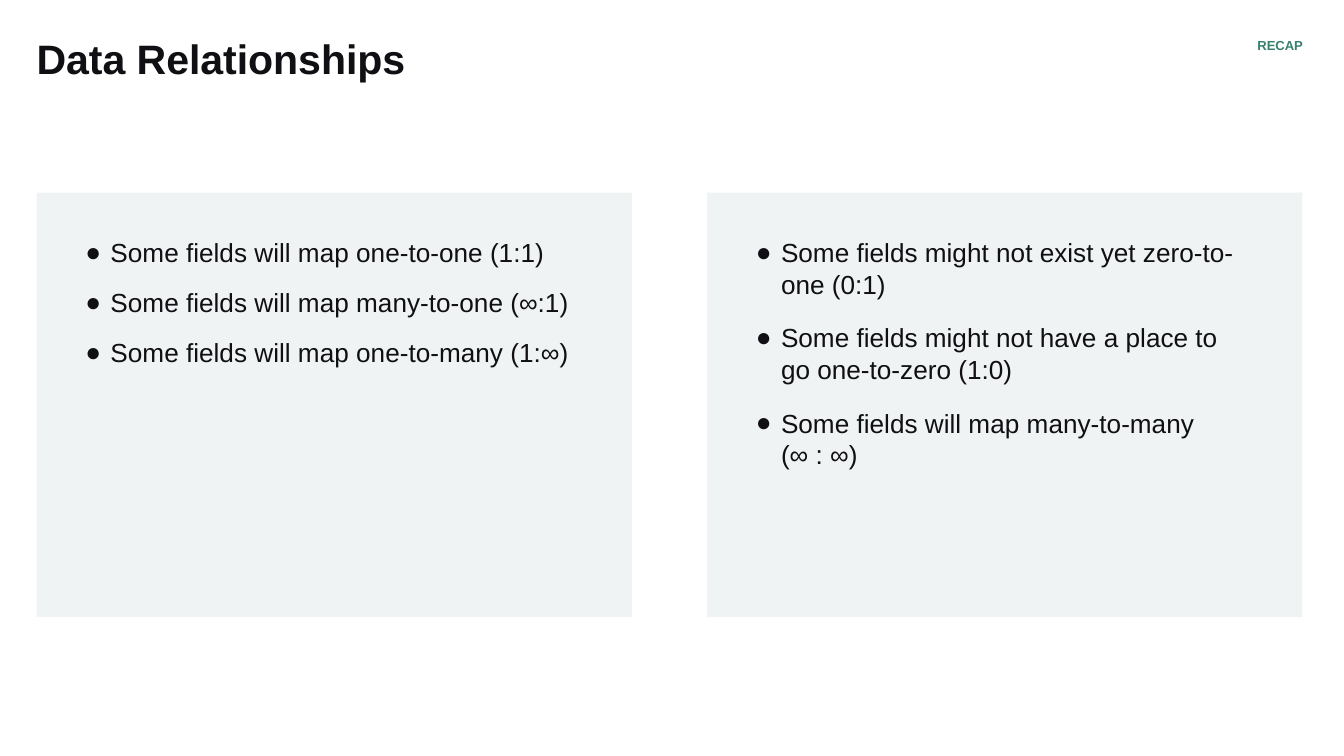
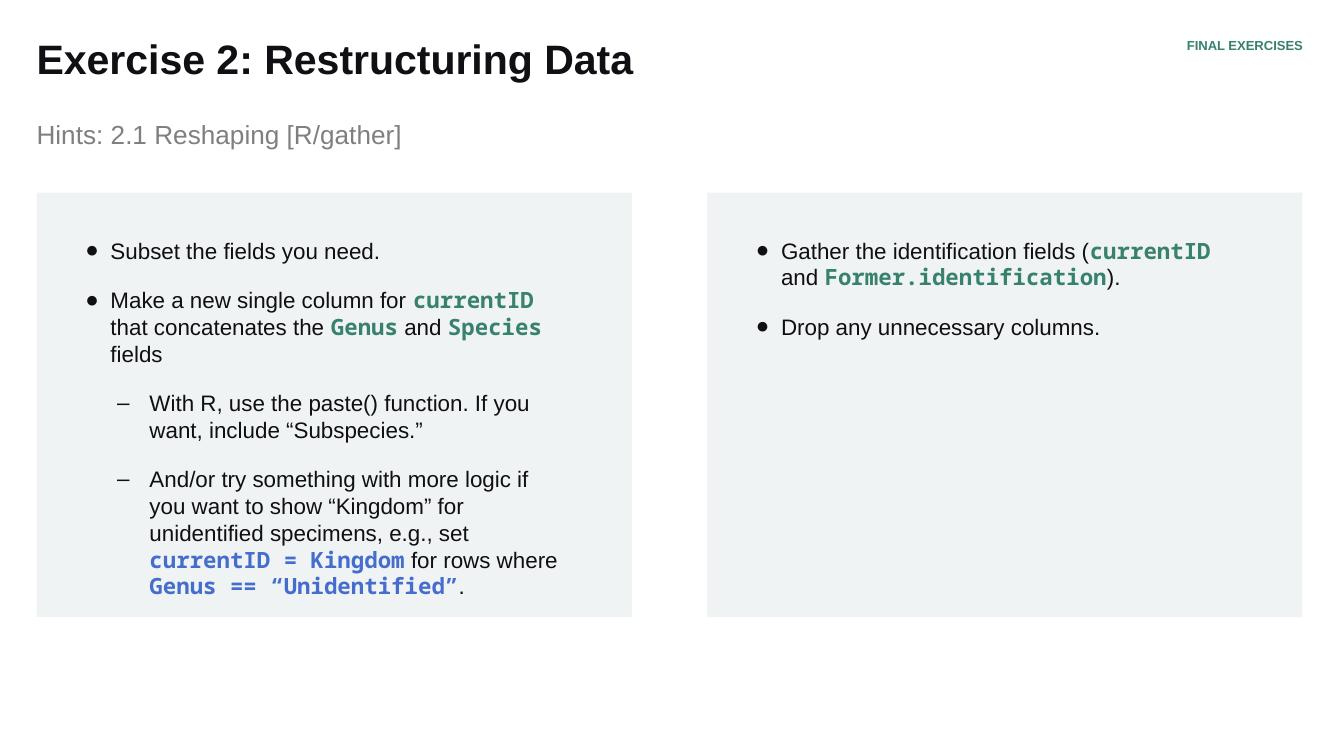
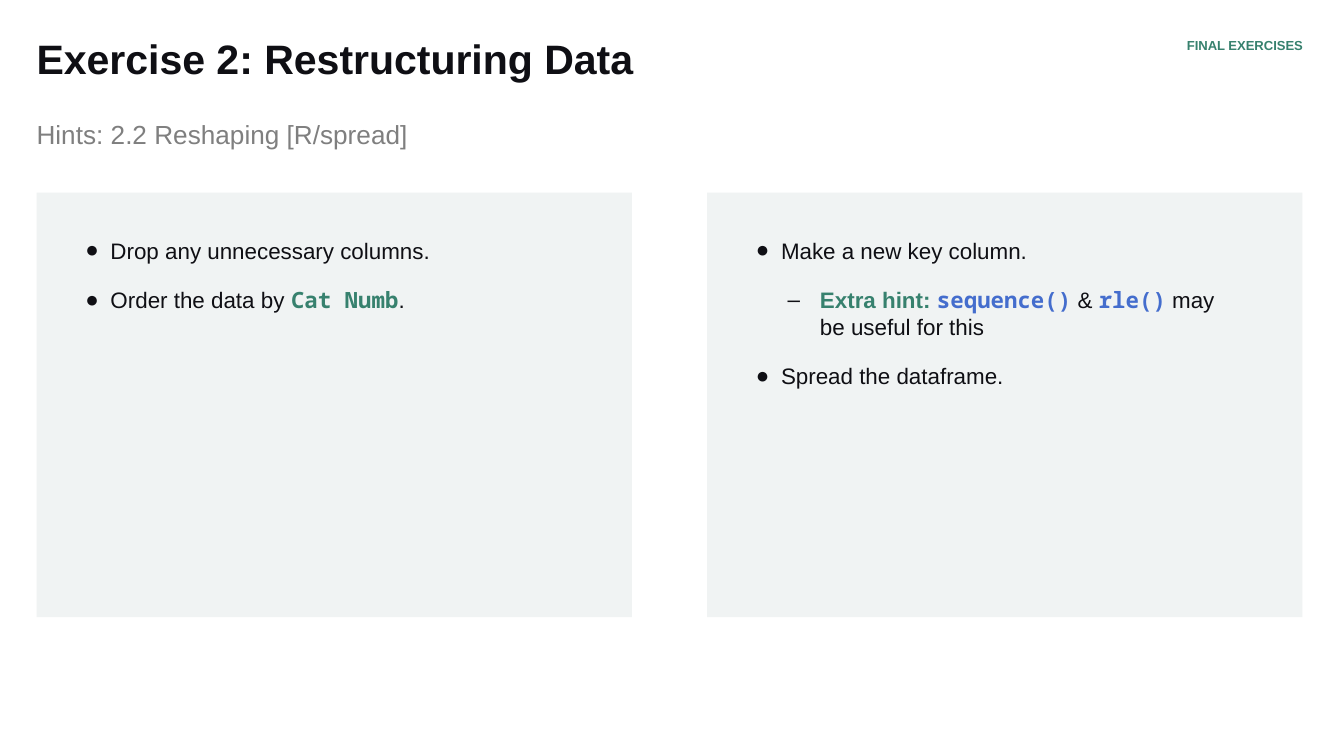
from dataclasses import dataclass

from lxml import etree
from pptx import Presentation
from pptx import util as u
from pptx.dml.color import RGBColor
from pptx.enum import shapes, text
from pptx.oxml import ns


@dataclass(frozen=True)
class Theme:
    """Colours, fonts and type sizes shared by the slides."""
    ink: str = "0F0F14"
    green: str = "37816E"
    blue: str = "446DCD"
    grey: str = "7F7F7F"
    panel: str = "F0F3F3"
    sans: str = "Arial"
    mono: str = "Noto Sans Mono"
    title: int = 22
    lead: int = 14
    body: int = 12
    tag: int = 7


@dataclass(frozen=True)
class Box:
    """A rectangle in points."""
    x: float
    y: float
    w: float
    h: float

    def spot(self):
        """Return the four lengths that place a shape."""
        return [u.Pt(n) for n in (self.x, self.y, self.w, self.h)]

    def sub(self, x, y, w, h):
        """Return a box placed relative to this one."""
        return Box(self.x + x, self.y + y, w, h)


T = Theme()
PAGE = Box(0, 0, 720, 405)
HEAD = PAGE.sub(19.6, 21, 678.4, 77)
PANEL = PAGE.sub(19.6, 103.2, 319, 227.5)
STEP = 359.2
LEVELS = (("●", 14.4, 13.5), ("–", 35.3, 17.3))
STYLES = {
    "field": (T.mono, T.green),
    "code": (T.mono, T.blue),
    "note": (T.sans, T.green),
}


def dress(font, name, color, bold=False, size=None):
    """Set the look of a font."""
    font.name, font.bold = name, bold
    font.color.rgb = RGBColor.from_string(color)
    if size:
        font.size = u.Pt(size)


def frame(shape, left=0, top=0, right=7.2, low=7.2):
    """Prepare a wrapping text frame anchored at the top."""
    area = shape.text_frame
    area.word_wrap = True
    area.auto_size = text.MSO_AUTO_SIZE.NONE
    area.vertical_anchor = text.MSO_ANCHOR.TOP
    area.margin_left, area.margin_top = u.Pt(left), u.Pt(top)
    area.margin_right, area.margin_bottom = u.Pt(right), u.Pt(low)
    return area


def place(shape, box):
    """Move a shape to a box."""
    shape.left, shape.top, shape.width, shape.height = box.spot()


def label(shape, words, size, color, bold=False, right=False, line=None):
    """Write a single line of text in a shape."""
    para = frame(shape, right=0 if right else 7.2).paragraphs[0]
    para.text = words
    para.alignment = text.PP_ALIGN.RIGHT if right else text.PP_ALIGN.LEFT
    if line:
        para.line_spacing = line
    dress(para.font, T.sans, color, bold, size)


def header(slide, box, title, tag, hint):
    """Place the title, the corner tag and the optional hint line."""
    place(slide.shapes.title, box.sub(0, 0, 575.3, 42.5))
    label(slide.shapes.title, title, T.title, T.ink, True, line=0.9)
    corner = slide.shapes.add_textbox(*box.sub(box.w - 153.4, 0, 153.4, 11.5).spot())
    label(corner, tag, T.tag, T.green, True, True, 0.9)
    if hint:
        strip = slide.shapes.add_textbox(*box.sub(0, 42.5, 510.5, 33.8).spot())
        label(strip, hint, T.lead, T.grey)


def bullet(para, level):
    """Give a paragraph the bullet and indent of its level."""
    mark, left, hang = LEVELS[level]
    para.level = level
    props = para._p.get_or_add_pPr()
    props.set("marL", str(u.Pt(left)))
    props.set("indent", str(-u.Pt(hang)))
    tint = etree.SubElement(props, ns.qn("a:buClr"))
    etree.SubElement(tint, ns.qn("a:srgbClr"), val=T.ink)
    etree.SubElement(props, ns.qn("a:buFont"), typeface=T.sans)
    etree.SubElement(props, ns.qn("a:buChar"), char=mark)


def points(area, items, size, gap):
    """Write bulleted items, each a level followed by its parts."""
    for i, (level, *parts) in enumerate(items):
        para = area.add_paragraph() if i else area.paragraphs[0]
        bullet(para, level)
        para.space_before = u.Pt(gap if i else 0)
        dress(para.font, T.sans, T.ink, size=size)
        for part in parts:
            if part == "\n":
                para.add_line_break()
                continue
            words, style = (part, None) if isinstance(part, str) else part
            run = para.add_run()
            run.text = words
            if style:
                dress(run.font, *STYLES[style], bold=True)


def panel(slide, box, items, size, gap):
    """Draw a tinted panel with its list."""
    back = slide.shapes.add_shape(shapes.MSO_SHAPE.RECTANGLE, *box.spot())
    back.shadow.inherit = False
    back.fill.solid()
    back.fill.fore_color.rgb = RGBColor.from_string(T.panel)
    back.line.fill.background()
    inner = slide.shapes.add_textbox(*box.sub(25.2, 16.4, 267.8, 184.3).spot())
    points(frame(inner, top=7.2), items, size, gap)


def page(deck, title, tag, lists, hint=None, size=T.body, gaps=(12, 12)):
    """Add a slide with a header and two panels."""
    slide = deck.slides.add_slide(deck.slide_layouts[5])
    header(slide, HEAD, title, tag, hint)
    for i, (items, gap) in enumerate(zip(lists, gaps)):
        panel(slide, PANEL.sub(i * STEP, 0, PANEL.w, PANEL.h), items, size, gap)


def main():
    """Build and save the deck."""
    deck = Presentation()
    deck.slide_width, deck.slide_height = u.Pt(PAGE.w), u.Pt(PAGE.h)
    page(deck, "Data Relationships", "RECAP", (
        [(0, "Some fields will map one-to-one (1:1)"),
         (0, "Some fields will map many-to-one (∞:1)"),
         (0, "Some fields will map one-to-many (1:∞)")],
        [(0, "Some fields might not exist yet zero-to-one (0:1)"),
         (0, "Some fields might not have a place to go one-to-zero (1:0)"),
         (0, "Some fields will map many-to-many", "\n", "(∞ : ∞)")],
    ), size=T.lead, gaps=(10, 12))

    task = "Exercise 2: Restructuring Data", "FINAL EXERCISES"
    page(deck, *task, (
        [(0, "Subset the fields you need."),
         (0, "Make a new single column for ", ("currentID", "field"),
          " that concatenates the ", ("Genus", "field"), " and ",
          ("Species", "field"), " fields"),
         (1, "With R, use the paste() function. If you want, include “Subspecies.”"),
         (1, "And/or try something with more logic if you want to show “Kingdom” "
             "for unidentified specimens, e.g., set ",
          ("currentID = Kingdom", "code"), " for rows where ",
          ("Genus == “Unidentified”", "code"), ".")],
        [(0, "Gather the identification fields (", ("currentID", "field"),
          " and ", ("Former.identification", "field"), ")."),
         (0, "Drop any unnecessary columns.")],
    ), "Hints: 2.1 Reshaping [R/gather]")
    page(deck, *task, (
        [(0, "Drop any unnecessary columns."),
         (0, "Order the data by ", ("Cat Numb", "field"), ".")],
        [(0, "Make a new key column."),
         (1, ("Extra hint: ", "note"), ("sequence()", "code"), " & ",
          ("rle()", "code"), " may be useful for this"),
         (0, "Spread the dataframe.")],
    ), "Hints: 2.2 Reshaping [R/spread]")
    deck.save("out.pptx")


if __name__ == "__main__":
    main()
